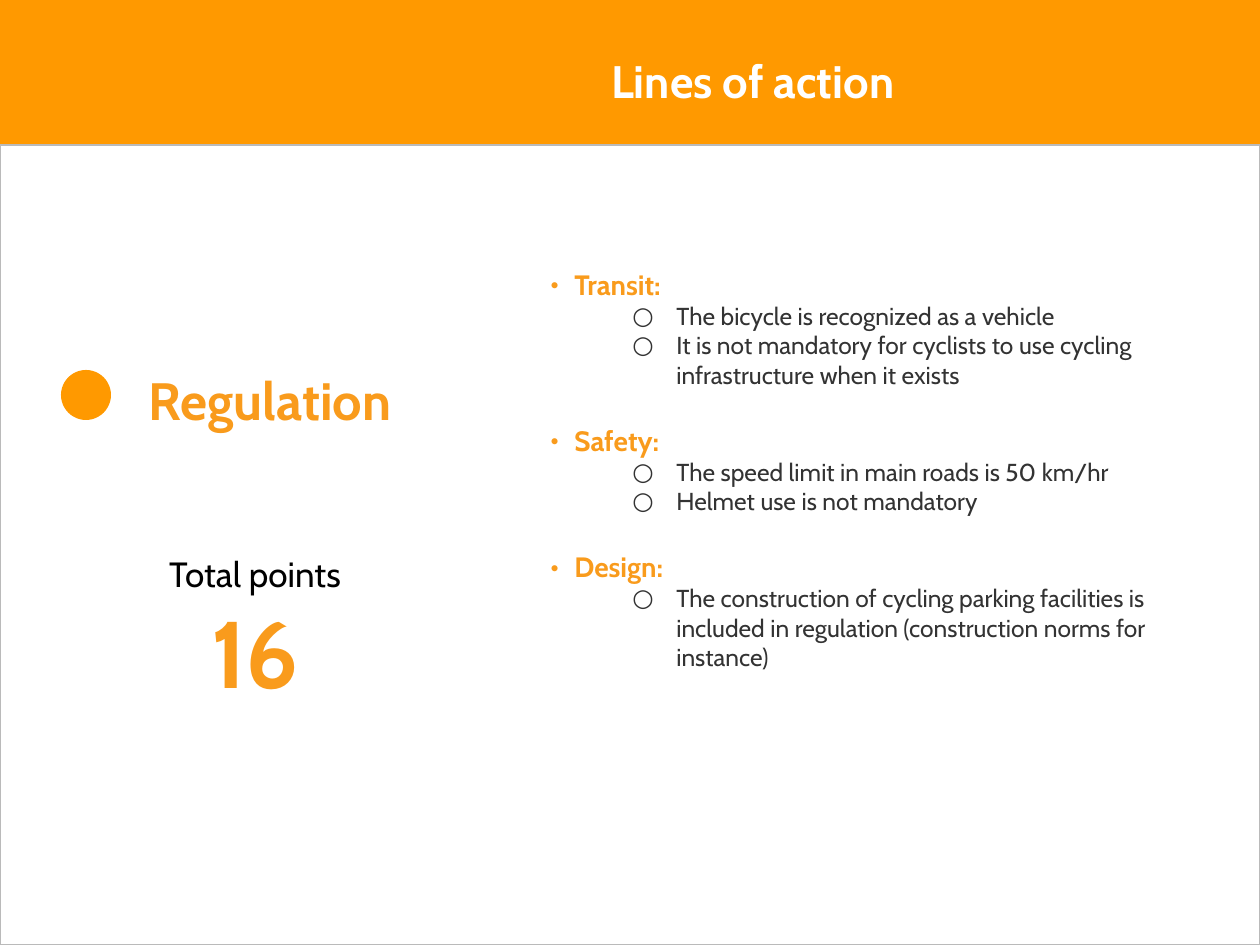
from lxml.etree import SubElement
from pptx import Presentation
from pptx.dml.color import RGBColor
from pptx.enum.shapes import MSO_SHAPE as Shape
from pptx.enum.text import MSO_ANCHOR as Anchor, MSO_AUTO_SIZE as AutoSize, PP_ALIGN as Align
from pptx.oxml.ns import qn
from pptx.util import Emu, Pt

PX_PER_INCH = 126
ORANGE, AMBER, WHITE = "FF9900", "F99B1C", "FFFFFF"
DARK, BLACK, GREY = "333333", "000000", "BABABA"

ACTIONS = {
    "Transit:": [
        "The bicycle is recognized as a vehicle",
        "It is not mandatory for cyclists to use cycling infrastructure when it exists",
    ],
    "Safety:": [
        "The speed limit in main roads is 50 km/hr",
        "Helmet use is not mandatory",
    ],
    "Design:": [
        "The construction of cycling parking facilities is included in regulation "
        "(construction norms for instance)",
    ],
}


def px(length):
    return Emu(round(length * 914400 / PX_PER_INCH))


def color(value):
    return RGBColor.from_string(value)


def write(para, text, size=14, fill=BLACK, bold=False, font="Cabin", align=Align.LEFT,
          before=0, spacing=1.0, bullet=None, level=0, margin=0, indent=0):
    para.level = level
    para.alignment = align
    para.space_before, para.space_after = Pt(before), Pt(0)
    para.line_spacing = spacing
    if bullet:
        props = para._p.get_or_add_pPr()
        props.set("marL", str(px(margin)))
        props.set("indent", str(px(indent)))
        bullet_color = SubElement(props, qn("a:buClr"))
        SubElement(bullet_color, qn("a:srgbClr"), val=fill)
        SubElement(props, qn("a:buFont"), typeface=font)
        SubElement(props, qn("a:buChar"), char=bullet)
    span = para.add_run()
    span.text = text
    span.font.name = font
    span.font.size = Pt(size)
    span.font.bold = bold
    span.font.color.rgb = color(fill)


class SlideBuilder:
    """Holds the style and the current slide, and adds each kind of element to it."""

    def __init__(self, deck, background):
        self.page = deck.slides.add_slide(deck.slide_layouts[5])
        self.page.background.fill.solid()
        self.page.background.fill.fore_color.rgb = color(background)

    def frame(self, box, inset, grow):
        frame = box.text_frame
        frame.word_wrap = True
        frame.auto_size = AutoSize.SHAPE_TO_FIT_TEXT if grow else AutoSize.NONE
        frame.vertical_anchor = Anchor.TOP
        frame.margin_left = frame.margin_right = Pt(7.2)
        frame.margin_top = frame.margin_bottom = Pt(inset)
        return frame

    def title(self, text, left, top, width, height, **style):
        box = self.page.shapes.title
        box.left, box.top, box.width, box.height = map(px, (left, top, width, height))
        write(self.frame(box, 3.6, False).paragraphs[0], text, **style)

    def shape(self, kind, left, top, width, height, fill, line=None):
        shape = self.page.shapes.add_shape(kind, *map(px, (left, top, width, height)))
        shape.shadow.inherit = False
        shape.fill.solid()
        shape.fill.fore_color.rgb = color(fill)
        if line:
            shape.line.color.rgb = color(line)
            shape.line.width = Pt(1)
        else:
            shape.line.fill.background()

    def text(self, left, top, width, height, lines, inset=3.6, grow=True):
        box = self.page.shapes.add_textbox(*map(px, (left, top, width, height)))
        frame = self.frame(box, inset, grow)
        for index, (text, style) in enumerate(lines):
            para = frame.add_paragraph() if index else frame.paragraphs[0]
            write(para, text, **style)


def action_lines():
    heading = dict(size=16, fill=AMBER, bold=True, bullet="•", margin=24, indent=-32)
    item = dict(size=14, fill=DARK, bullet="○", level=1, margin=126, indent=-44)
    lines = []
    for name, items in ACTIONS.items():
        lines.append((name, dict(heading, before=19.5 if lines else 0)))
        lines += [(text, item) for text in items]
    return lines


def main():
    deck = Presentation()
    deck.slide_width, deck.slide_height = px(1260), px(945)
    slide = SlideBuilder(deck, ORANGE)
    slide.title("Lines of action", 246, 47, 1014, 68,
                size=26, fill=WHITE, bold=True, align=Align.CENTER)
    slide.shape(Shape.RECTANGLE, 0, 145, 1260, 800, WHITE, line=GREY)
    slide.text(538, 261, 630, 479, action_lines())
    slide.text(136, 343, 372, 156,
               [("Regulation", dict(size=30, fill=AMBER, bold=True, spacing=1.2))],
               inset=7.2, grow=False)
    slide.text(112, 546, 286, 170, [
        ("Total points", dict(size=20, align=Align.CENTER)),
        ("16", dict(size=54, fill=AMBER, bold=True, align=Align.CENTER)),
    ])
    slide.shape(Shape.OVAL, 61, 370, 50, 50, ORANGE)
    deck.save("out.pptx")


if __name__ == "__main__":
    main()
